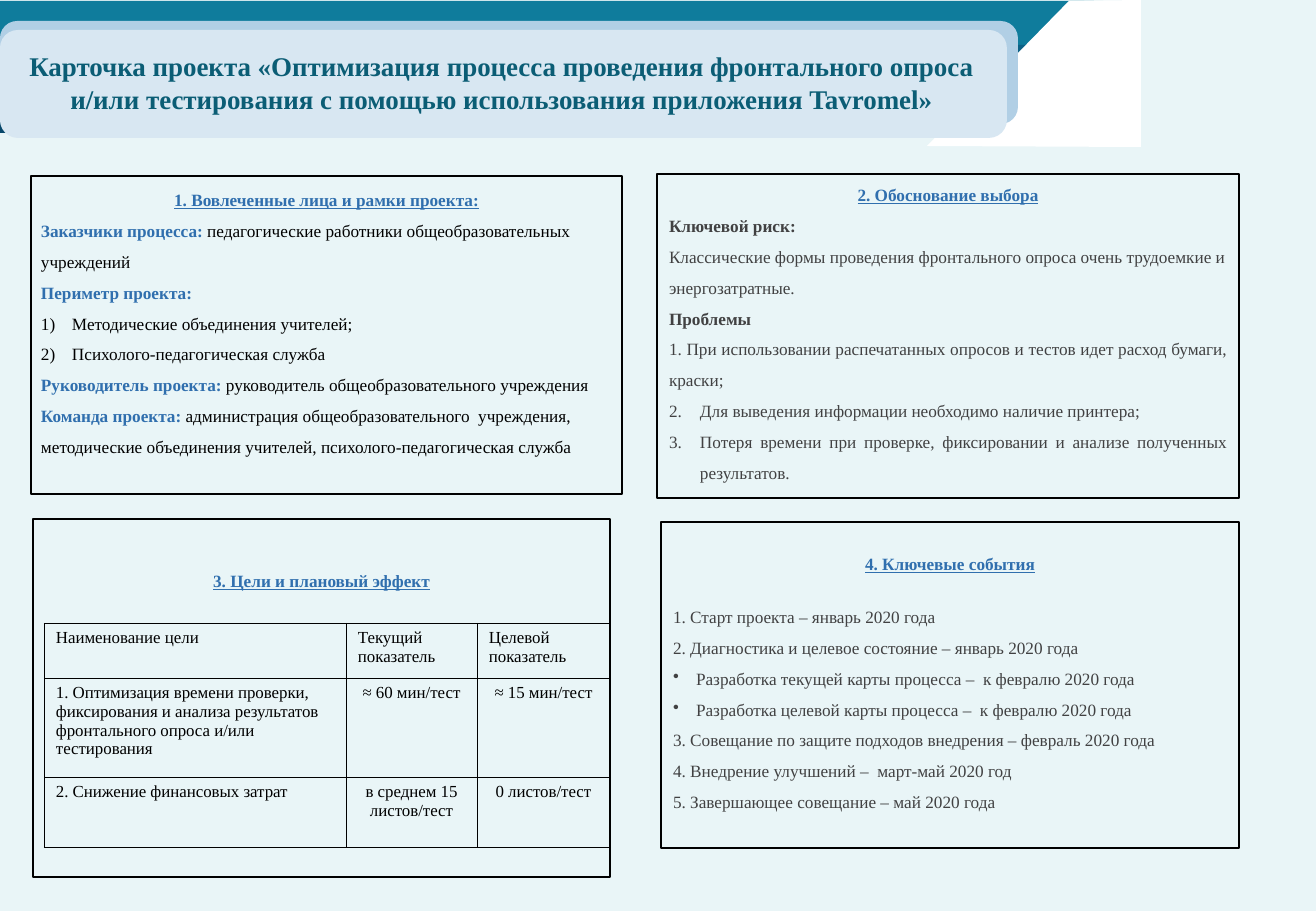
from itertools import accumulate

from lxml.etree import SubElement
from pptx import Presentation
from pptx.dml.color import RGBColor
from pptx.enum.shapes import MSO_SHAPE
from pptx.enum.text import MSO_ANCHOR, PP_ALIGN
from pptx.oxml.ns import qn
from pptx.util import Pt

PX = 7526  # EMU in one px
FONT = "Times New Roman"
PALE = RGBColor(0xE9, 0xF5, 0xF7)
WHITE = RGBColor(0xFF, 0xFF, 0xFF)
BLACK = RGBColor(0, 0, 0)
GREY = RGBColor(0x41, 0x41, 0x42)
BLUE = RGBColor(0x30, 0x6F, 0xAE)
TEAL = RGBColor(0x0B, 0x5D, 0x75)
STRIPES = [RGBColor(0x0F, 0x7C, 0x9C), RGBColor(0x0D, 0x61, 0x86), RGBColor(0x08, 0x48, 0x6B)]
CARD_BACK = RGBColor(0xB1, 0xCF, 0xE5)
CARD_FRONT = RGBColor(0xD8, 0xE7, 0xF2)

LINE = {"line_spacing": Pt(18.3), "space_before": Pt(0)}
CENTER = {**LINE, "alignment": PP_ALIGN.CENTER}
LEFT = {**LINE, "alignment": PP_ALIGN.LEFT}
JUSTIFY = {**LINE, "alignment": PP_ALIGN.JUSTIFY}
AFTER_HEADING = {**LEFT, "space_before": Pt(13)}

BODY = {"name": FONT, "size": Pt(10.2), "bold": False}
HEADING = {**BODY, "bold": True, "underline": True, "color": BLUE}
LABEL = {**BODY, "bold": True, "color": BLUE}
PLAIN = {**BODY, "color": BLACK}
GREY_TEXT = {**BODY, "color": GREY}
GREY_LABEL = {**GREY_TEXT, "bold": True}
CELL = {**PLAIN, "size": Pt(10)}
TITLE = {"name": FONT, "size": Pt(16), "bold": True, "color": TEAL}

DOT = (23, "buChar", {"char": "•"})
BRACKET = (31, "buAutoNum", {"type": "arabicParenR"})
FROM_TWO = (31, "buAutoNum", {"type": "arabicPeriod", "startAt": "2"})

PEOPLE = [
    (CENTER, None, [("1. Вовлеченные лица и рамки проекта:", HEADING)]),
    (LEFT, None, [("Заказчики процесса:", LABEL),
                  (" педагогические работники общеобразовательных учреждений", PLAIN)]),
    (LEFT, None, [("Периметр проекта:", LABEL)]),
    (LEFT, BRACKET, [("Методические объединения учителей;", PLAIN)]),
    (LEFT, BRACKET, [("Психолого-педагогическая служба", PLAIN)]),
    (LEFT, None, [("Руководитель проекта:", LABEL),
                  (" руководитель общеобразовательного учреждения", PLAIN)]),
    (LEFT, None, [("Команда проекта: ", LABEL),
                  ("администрация общеобразовательного  учреждения, методические "
                   "объединения учителей, психолого-педагогическая служба", PLAIN)]),
]
REASONS = [
    (CENTER, None, [("2. Обоснование выбора", HEADING)]),
    (LEFT, None, [("Ключевой риск:", GREY_LABEL)]),
    (LEFT, None, [("Классические формы проведения фронтального опроса очень трудоемкие "
                   "и энергозатратные.", GREY_TEXT)]),
    (LEFT, None, [("Проблемы", GREY_LABEL)]),
    (JUSTIFY, None, [("1. При использовании распечатанных опросов и тестов идет расход "
                      "бумаги, краски;", GREY_TEXT)]),
    (JUSTIFY, FROM_TWO, [("Для выведения информации необходимо наличие принтера;", GREY_TEXT)]),
    (JUSTIFY, FROM_TWO, [("Потеря времени при проверке, фиксировании и анализе полученных "
                          "результатов.", GREY_TEXT)]),
]
GOALS = [(CENTER, None, [("3. Цели и плановый эффект", HEADING)])]
EVENTS = [
    (CENTER, None, [("4. Ключевые события", HEADING)]),
    (AFTER_HEADING, None, [("1. Старт проекта – январь 2020 года", GREY_TEXT)]),
    (LEFT, None, [("2. Диагностика и целевое состояние – январь 2020 года", GREY_TEXT)]),
    (LEFT, DOT, [("Разработка текущей карты процесса –  к февралю 2020 года", GREY_TEXT)]),
    (LEFT, DOT, [("Разработка целевой карты процесса –  к февралю 2020 года", GREY_TEXT)]),
    (LEFT, None, [("3. Совещание по защите подходов внедрения – февраль 2020 года", GREY_TEXT)]),
    (LEFT, None, [("4. Внедрение улучшений –  март-май 2020 год", GREY_TEXT)]),
    (LEFT, None, [("5. Завершающее совещание – май 2020 года", GREY_TEXT)]),
]
# box, top inset, side inset, paragraphs
PANELS = [
    ((33, 519, 577, 358), 41, 12, GOALS),
    ((661, 522, 578, 326), 21, 12, EVENTS),
    ((31, 176, 591, 318), 3, 10, PEOPLE),
    ((657, 174, 582, 324), 0, 12, REASONS),
]
GOAL_ROWS = [
    ("Наименование цели", "Текущий показатель", "Целевой показатель"),
    ("1. Оптимизация времени проверки, фиксирования и анализа результатов "
     "фронтального опроса и/или тестирования", "≈ 60 мин/тест", "≈ 15 мин/тест"),
    ("2. Снижение финансовых затрат", "в среднем 15 листов/тест", "0 листов/тест"),
]


def emu(box):
    return [length * PX for length in box]


def apply(target, values):
    for name, value in values.items():
        if name == "color":
            target.color.rgb = value
        else:
            setattr(target, name, value)


def set_insets(holder, left, top, right, bottom):
    for side, inset in zip(("left", "top", "right", "bottom"), (left, top, right, bottom)):
        setattr(holder, f"margin_{side}", inset * PX)


def write(paragraph, layout, bullet, runs):
    if bullet:
        indent, tag, attributes = bullet
        properties = paragraph._p.get_or_add_pPr()
        properties.set("marL", str(indent * PX))
        properties.set("indent", str(-indent * PX))
        SubElement(properties, qn(f"a:{tag}"), attributes)
    apply(paragraph, layout)
    for wording, style in runs:
        run = paragraph.add_run()
        run.text = wording
        apply(run.font, style)


def add_block(slide, kind, box, color):
    block = slide.shapes.add_shape(kind, *emu(box))
    block.shadow.inherit = False
    block.fill.solid()
    block.fill.fore_color.rgb = color
    block.line.fill.background()


def add_header(slide, width, stripe_height):
    """Striped band, white corner and two cards that carry the title."""
    for order, color in enumerate(STRIPES):
        add_block(slide, MSO_SHAPE.RECTANGLE,
                  (0, 1 + order * stripe_height, width, stripe_height), color)
    builder = slide.shapes.build_freeform(1141, 147, scale=PX)
    builder.add_line_segments([(927, 146), (1069, 1), (1141, 0)])
    corner = builder.convert_to_shape()
    corner.shadow.inherit = False
    corner.fill.solid()
    corner.fill.fore_color.rgb = WHITE
    corner.line.fill.background()
    add_block(slide, MSO_SHAPE.ROUNDED_RECTANGLE, (0, 21, 1018, 103), CARD_BACK)
    add_block(slide, MSO_SHAPE.ROUNDED_RECTANGLE, (0, 30, 1007, 108), CARD_FRONT)


def place_title(slide, box):
    title = slide.shapes.title
    slide.shapes._spTree.append(title._element)  # in front of the cards
    title.left, title.top, title.width, title.height = emu(box)
    frame = title.text_frame
    frame.word_wrap = True
    frame.vertical_anchor = MSO_ANCHOR.MIDDLE
    set_insets(frame, 0, 0, 0, 0)
    write(frame.paragraphs[0], {**CENTER, "line_spacing": Pt(19.6)}, None,
          [("Карточка проекта «Оптимизация процесса проведения фронтального опроса и/или "
            "тестирования с помощью использования приложения Tavromel»", TITLE)])


def add_panel(slide, box, top_inset, side_inset, paragraphs):
    panel = slide.shapes.add_shape(MSO_SHAPE.RECTANGLE, *emu(box))
    panel.shadow.inherit = False
    panel.fill.background()
    panel.line.color.rgb = BLACK
    panel.line.width = Pt(0.75)
    frame = panel.text_frame
    frame.word_wrap = True
    frame.vertical_anchor = MSO_ANCHOR.TOP
    set_insets(frame, side_inset, top_inset, side_inset, 0)
    for order, content in enumerate(paragraphs):
        write(frame.add_paragraph() if order else frame.paragraphs[0], *content)


def add_borders(cell):
    for side in ("lnL", "lnR", "lnT", "lnB"):
        border = SubElement(cell._tc.get_or_add_tcPr(), qn(f"a:{side}"), {"w": str(Pt(0.25))})
        SubElement(SubElement(border, qn("a:solidFill")), qn("a:srgbClr"), {"val": str(BLACK)})


def add_goal_table(slide, left, top, widths, heights):
    box = (left, top, list(accumulate(widths))[-1], list(accumulate(heights))[-1])
    table = slide.shapes.add_table(len(heights), len(widths), *emu(box)).table
    table.first_row = table.horz_banding = False
    for column, width in zip(table.columns, widths):
        column.width = width * PX
    for row, height in zip(table.rows, heights):
        row.height = height * PX
    for r, wordings in enumerate(GOAL_ROWS):
        for c, wording in enumerate(wordings):
            cell = table.cell(r, c)
            add_borders(cell)
            cell.fill.background()
            set_insets(cell, 12, 6, 12, 6)
            alignment = PP_ALIGN.CENTER if r and c else PP_ALIGN.LEFT
            write(cell.text_frame.paragraphs[0], {"alignment": alignment}, None, [(wording, CELL)])


def main():
    deck = Presentation()
    deck.slide_width, deck.slide_height = emu((1316, 911))
    slide = deck.slides.add_slide(deck.slide_layouts[5])
    slide.background.fill.solid()
    slide.background.fill.fore_color.rgb = PALE
    add_header(slide, 1094, 44)
    for panel in PANELS:
        add_panel(slide, *panel)
    add_goal_table(slide, 44, 623, (302, 131, 133), (55, 99, 70))
    place_title(slide, (0, 49, 1003, 66))
    deck.save("out.pptx")


if __name__ == "__main__":
    main()
